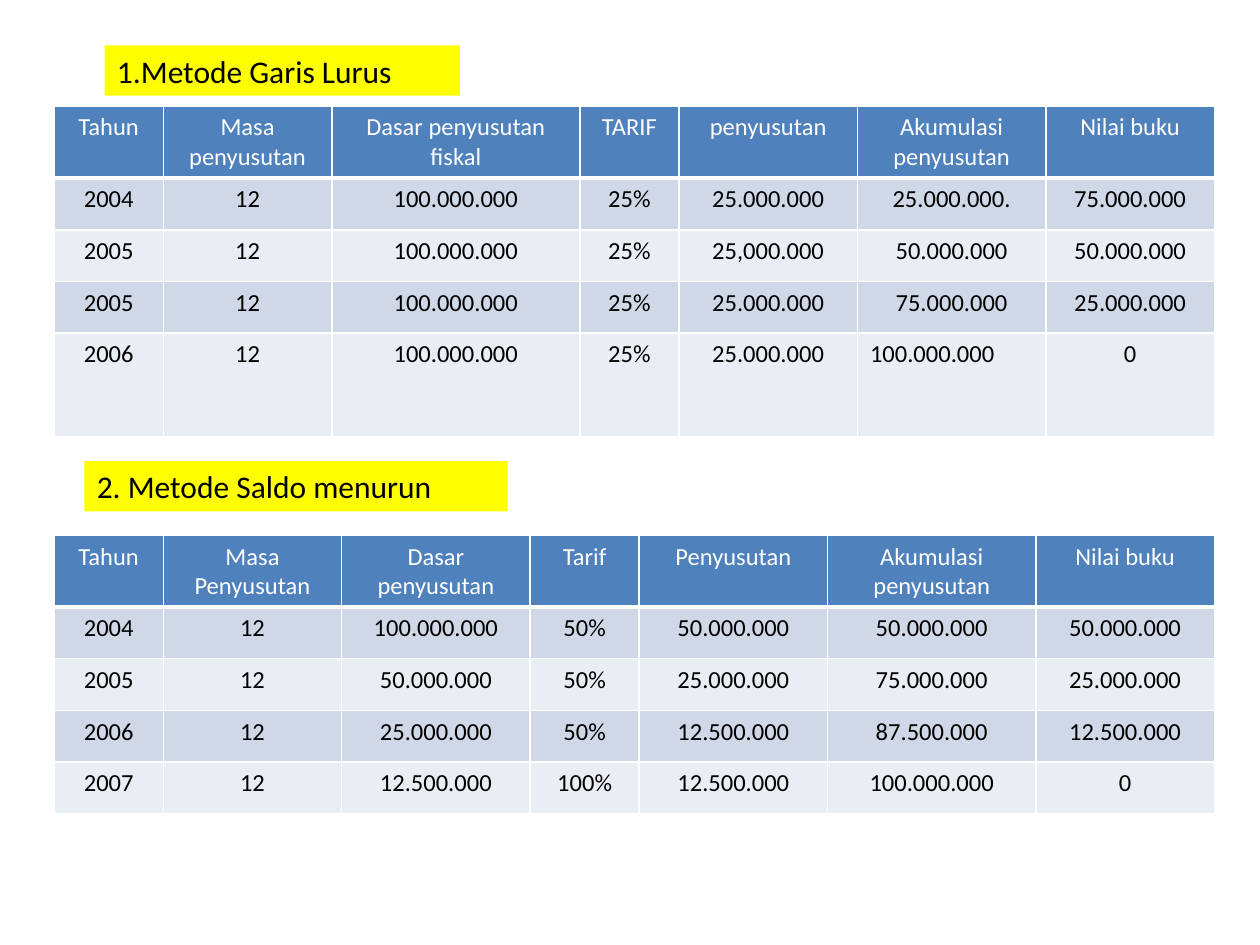
import dataclasses
import pptx
import pptx.dml.color
import pptx.enum.shapes
import pptx.enum.text
import pptx.oxml
import pptx.oxml.ns
import pptx.util


@dataclasses.dataclass(frozen=True)
class Theme:
    font: str = "Calibri"
    cell: int = 14
    title: int = 18
    ink: str = "000000"
    paper: str = "FFFFFF"
    mark: str = "FFFF00"
    head: str = "4F81BD"
    bands: tuple = ("D0D8E8", "E9EDF4")
    thin: int = 1
    thick: int = 3


THEME = Theme()
WIDE = pptx.util.Inches(10)
HIGH = pptx.util.Inches(7.5)
ROW = 5.47

LINE = {
    "title": "1.Metode Garis Lurus",
    "label": (8.3, 4.8, 28.2, 5.33),
    "box": (4.3, 11.2, 92.1, 34.67),
    "cols": (11, 17, 25, 10, 18, 19, 17),
    "rows": (ROW, ROW, ROW, ROW, 2 * ROW),
    "left": {(4, 5)},
    "data": (
        ("Tahun", "Masa penyusutan", "Dasar penyusutan fiskal", "TARIF",
         "penyusutan", "Akumulasi penyusutan", "Nilai buku"),
        ("2004", "12", "100.000.000", "25%", "25.000.000", "25.000.000.", "75.000.000"),
        ("2005", "12", "100.000.000", "25%", "25,000.000", "50.000.000", "50.000.000"),
        ("2005", "12", "100.000.000", "25%", "25.000.000", "75.000.000", "25.000.000"),
        ("2006", "12", "100.000.000", "25%", "25.000.000", "100.000.000", "0"),
    ),
}
FALL = {
    "title": "2. Metode Saldo menurun",
    "label": (6.7, 48.8, 33.6, 5.33),
    "box": (4.3, 56.67, 92.1, 29.2),
    "cols": (11, 18, 19, 11, 19, 21, 18),
    "rows": (4.13, ROW, ROW, ROW, ROW),
    "left": set(),
    "data": (
        ("Tahun", "Masa Penyusutan", "Dasar penyusutan", "Tarif",
         "Penyusutan", "Akumulasi penyusutan", "Nilai buku"),
        ("2004", "12", "100.000.000", "50%", "50.000.000", "50.000.000", "50.000.000"),
        ("2005", "12", "50.000.000", "50%", "25.000.000", "75.000.000", "25.000.000"),
        ("2006", "12", "25.000.000", "50%", "12.500.000", "87.500.000", "12.500.000"),
        ("2007", "12", "12.500.000", "100%", "12.500.000", "100.000.000", "0"),
    ),
}


def share(part, whole):
    return round(whole * part / 100)


def place(box):
    return [share(part, whole) for part, whole in zip(box, (WIDE, HIGH) * 2)]


def paint(fill, tint):
    fill.solid()
    fill.fore_color.rgb = pptx.dml.color.RGBColor.from_string(tint)


def write(frame, text, size, tint, align):
    para = frame.paragraphs[0]
    para.alignment = align
    run = para.add_run()
    run.text = text
    run.font.name = THEME.font
    run.font.size = pptx.util.Pt(size)
    run.font.bold = False
    run.font.color.rgb = pptx.dml.color.RGBColor.from_string(tint)


def edge(cell, base):
    props = cell._tc.get_or_add_tcPr()
    widths = (THEME.thin, THEME.thin, THEME.thin, base)
    for spot, (side, size) in enumerate(zip("LRTB", widths)):
        props.insert(spot, pptx.oxml.parse_xml(
            f'<a:ln{side} {pptx.oxml.ns.nsdecls("a")} w="{pptx.util.Pt(size)}">'
            f'<a:solidFill><a:srgbClr val="{THEME.paper}"/></a:solidFill>'
            f'</a:ln{side}>'))


def label(slide, text, box):
    shape = slide.shapes.add_shape(
        pptx.enum.shapes.MSO_SHAPE.RECTANGLE, *place(box))
    shape.shadow.inherit = False
    paint(shape.fill, THEME.mark)
    shape.line.fill.background()
    frame = shape.text_frame
    frame.word_wrap = False
    frame.auto_size = pptx.enum.text.MSO_AUTO_SIZE.SHAPE_TO_FIT_TEXT
    frame.vertical_anchor = pptx.enum.text.MSO_ANCHOR.TOP
    write(frame, text, THEME.title, THEME.ink, pptx.enum.text.PP_ALIGN.LEFT)


def grid(slide, part):
    data, cols = part["data"], part["cols"]
    spot = place(part["box"])
    frame = slide.shapes.add_table(len(data), len(cols), *spot)
    table = frame.table
    for col, units in zip(table.columns, cols):
        col.width = round(spot[2] * units / sum(cols))
    for row, size in zip(table.rows, part["rows"]):
        row.height = share(size, HIGH)
    frame.height = spot[3]
    for r, line in enumerate(data):
        top = r == 0
        fill = THEME.head if top else THEME.bands[(r - 1) % 2]
        tint = THEME.paper if top else THEME.ink
        for c, text in enumerate(line):
            cell = table.cell(r, c)
            paint(cell.fill, fill)
            edge(cell, THEME.thick if top else THEME.thin)
            aligns = pptx.enum.text.PP_ALIGN
            align = aligns.LEFT if (r, c) in part["left"] else aligns.CENTER
            write(cell.text_frame, text, THEME.cell, tint, align)


def main():
    deck = pptx.Presentation()
    deck.slide_width, deck.slide_height = WIDE, HIGH
    slide = deck.slides.add_slide(deck.slide_layouts[6])
    for part in (LINE, FALL):
        grid(slide, part)
        label(slide, part["title"], part["label"])
    deck.save("out.pptx")


if __name__ == "__main__":
    main()
